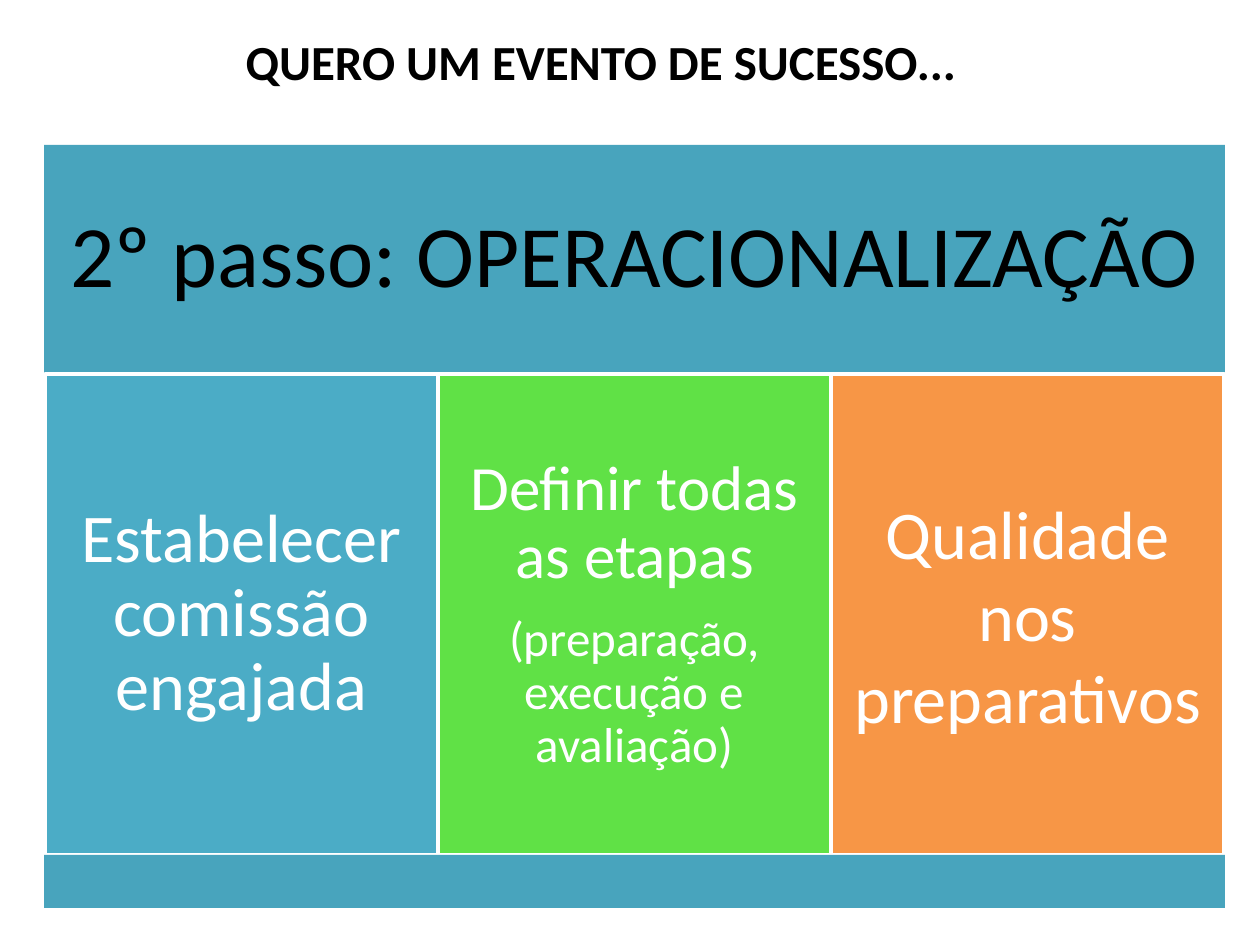
from pptx import Presentation
from pptx.dml.color import RGBColor
from pptx.enum.shapes import MSO_SHAPE
from pptx.enum.text import MSO_ANCHOR, PP_ALIGN
from pptx.util import Emu, Pt

BLACK = RGBColor(0x00, 0x00, 0x00)
WHITE = RGBColor(0xFF, 0xFF, 0xFF)
BAND_TEAL = RGBColor(0x48, 0xA4, 0xBD)
TEAL = RGBColor(0x4B, 0xAC, 0xC6)
GREEN = RGBColor(0x60, 0xE1, 0x46)
ORANGE = RGBColor(0xF7, 0x96, 0x46)

FONT = "Calibri"
PX_PER_INCH = 126

BAND_LEFT, BAND_WIDTH = 44, 1181
HEADER_TOP, HEADER_HEIGHT = 145, 229
CARD_LEFT, CARD_WIDTH, CARD_HEIGHT = 45, 393, 481
FOOTER_HEIGHT = 53

# Fill, inset, line spacing, and (text, size) paragraphs of each card
CARDS = [
    (TEAL, 20, 0.9, [("Estabelecer comissão engajada", 39)]),
    (GREEN, 19, 0.9, [("Definir todas as etapas", 36),
                      ("(preparação, execução e avaliação)", 28)]),
    (ORANGE, 20, 1.0, [("Qualidade nos preparativos", 39)]),
]


def px(value):
    return Emu(round(value * 914400 / PX_PER_INCH))


def place(shape, left, top, width, height):
    shape.left, shape.top = px(left), px(top)
    shape.width, shape.height = px(width), px(height)


def style_font(font, size, color, bold=False):
    font.name, font.size, font.bold = FONT, Pt(size), bold
    font.color.rgb = color


def add_title(slide, text):
    title = slide.shapes.title
    place(title, 233, 16, 785, 90)
    frame = title.text_frame
    frame.text = text
    frame.vertical_anchor = MSO_ANCHOR.MIDDLE
    paragraph = frame.paragraphs[0]
    paragraph.alignment = PP_ALIGN.JUSTIFY
    style_font(paragraph.font, 28, BLACK, bold=True)


def add_block(slide, left, top, width, height, fill, outline=None):
    block = slide.shapes.add_shape(
        MSO_SHAPE.RECTANGLE, px(left), px(top), px(width), px(height))
    block.shadow.inherit = False
    block.fill.solid()
    block.fill.fore_color.rgb = fill
    if outline is None:
        block.line.fill.background()
    else:
        block.line.color.rgb = outline
        block.line.width = Pt(2)
    return block


def write_text(block, items, color, inset, line_spacing):
    frame = block.text_frame
    frame.word_wrap = True
    frame.vertical_anchor = MSO_ANCHOR.MIDDLE
    frame.margin_left = frame.margin_right = px(inset)
    frame.margin_top = frame.margin_bottom = px(inset)
    for index, (text, size) in enumerate(items):
        paragraph = frame.add_paragraph() if index else frame.paragraphs[0]
        paragraph.text = text
        paragraph.alignment = PP_ALIGN.CENTER
        paragraph.line_spacing = line_spacing
        if index:
            paragraph.space_before = Pt(13)
        style_font(paragraph.font, size, color)


def main():
    presentation = Presentation()
    presentation.slide_width, presentation.slide_height = px(1260), px(945)
    slide = presentation.slides.add_slide(presentation.slide_layouts[5])
    add_title(slide, "QUERO UM EVENTO DE SUCESSO...")

    # Header band
    header = add_block(slide, BAND_LEFT, HEADER_TOP, BAND_WIDTH,
                       HEADER_HEIGHT, BAND_TEAL)
    write_text(header, [("2º passo: OPERACIONALIZAÇÃO", 50)], BLACK, 26, 0.9)

    # Three cards side by side
    card_top = HEADER_TOP + HEADER_HEIGHT
    for column, (fill, inset, line_spacing, items) in enumerate(CARDS):
        card = add_block(slide, CARD_LEFT + column * CARD_WIDTH, card_top,
                         CARD_WIDTH, CARD_HEIGHT, fill, WHITE)
        write_text(card, items, WHITE, inset, line_spacing)

    # Footer band
    add_block(slide, BAND_LEFT, card_top + CARD_HEIGHT, BAND_WIDTH,
              FOOTER_HEIGHT, BAND_TEAL)

    presentation.save("out.pptx")


if __name__ == "__main__":
    main()
